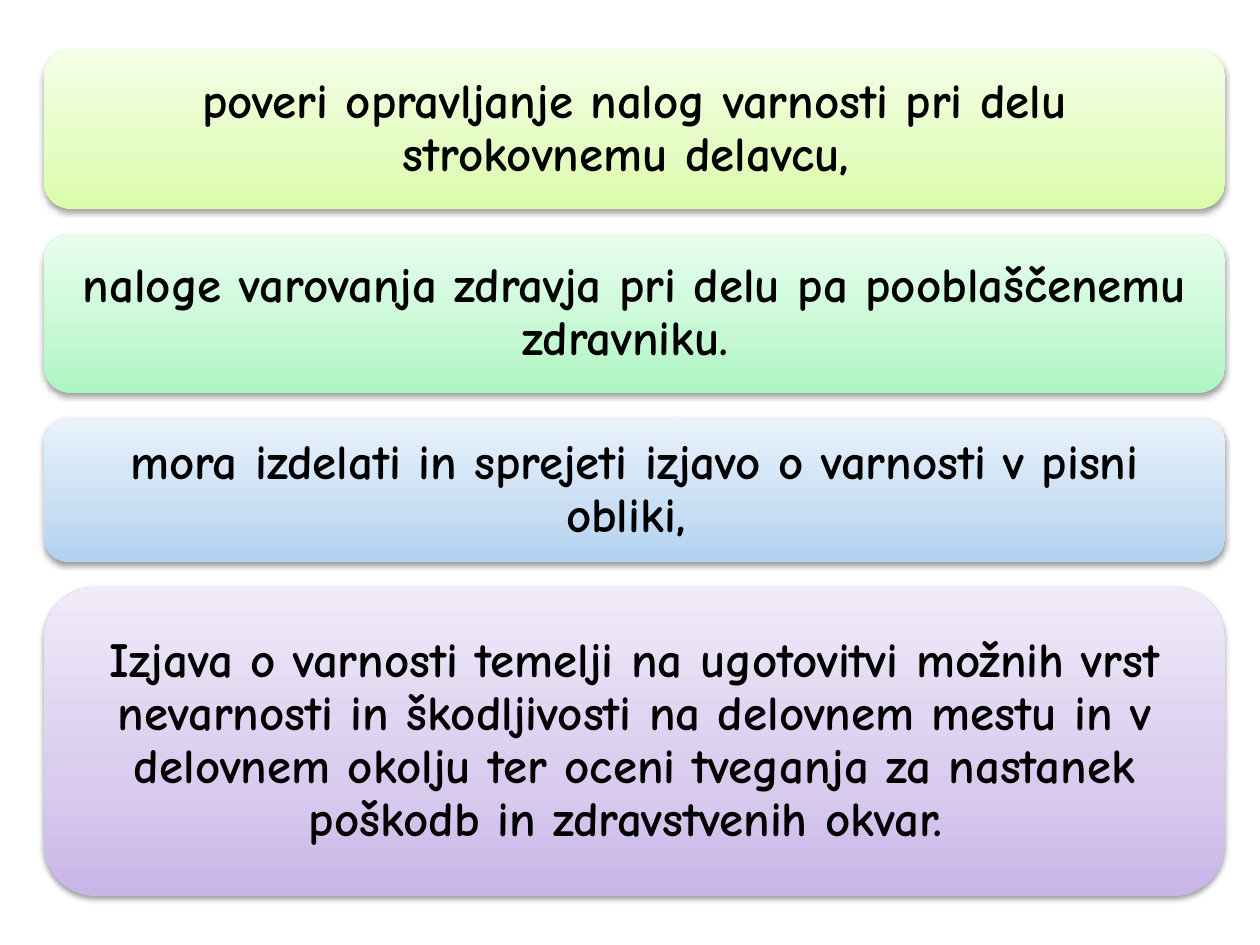
"""Build a slide of four stacked gradient panels about safety at work."""
from copy import deepcopy
from dataclasses import dataclass

from pptx import Presentation
from pptx.dml.color import RGBColor
from pptx.enum.shapes import MSO_SHAPE
from pptx.enum.text import MSO_ANCHOR, PP_ALIGN
from pptx.oxml import parse_xml
from pptx.oxml.ns import nsdecls, qn
from pptx.util import Pt

ROUNDED = MSO_SHAPE.ROUNDED_RECTANGLE
MIDDLE = MSO_ANCHOR.MIDDLE
CENTER = PP_ALIGN.CENTER

EMU_PER_PX = 914400 / 126
LEFT, TOP, WIDTH, GAP = 44, 50, 1181, 25
INSET = 15
STOP_POSITIONS = (0, 0.35, 1)
SHADOW_XML = (
    f'<a:outerShdw {nsdecls("a")} blurRad="40000" dist="20000" dir="5400000" '
    'rotWithShape="0"><a:srgbClr val="000000"><a:alpha val="38000"/>'
    '</a:srgbClr></a:outerShdw>'
)


@dataclass(frozen=True)
class Panel:
    text: str
    height: int
    colors: tuple[str, str, str]


PANELS = (
    Panel("poveri opravljanje nalog varnosti pri delu strokovnemu delavcu, ",
          159, ("DAFDA7", "E4FCC2", "F5FFE7")),
    Panel("naloge varovanja zdravja pri delu pa pooblaščenemu zdravniku. ",
          159, ("ACF6C1", "C5F8D3", "E8FDEE")),
    Panel("mora izdelati in sprejeti izjavo o varnosti v pisni obliki, ",
          144, ("B0D1EF", "C8DEF3", "E9F2FB")),
    Panel("Izjava o varnosti temelji na ugotovitvi možnih vrst nevarnosti in "
          "škodljivosti na delovnem mestu in v delovnem okolju ter oceni "
          "tveganja za nastanek poškodb in zdravstvenih okvar. ",
          309, ("C9B5E8", "D8CBEE", "F0EAF9")),
)


def px(n: int) -> int:
    """Turn pixels into EMU."""
    return round(n * EMU_PER_PX)


def rgb(color: str) -> RGBColor:
    """Turn a hex string into a colour."""
    return RGBColor.from_string(color)


def fill_gradient(sp, colors: tuple[str, str, str]) -> None:
    """Fill a shape with three colours running from bottom to top."""
    sp.fill.gradient()
    sp.fill.gradient_angle = 90
    gs_lst = next(sp._element.spPr.iter(qn("a:gsLst")))
    gs_lst.insert(1, deepcopy(gs_lst[0]))
    for stop, position, color in zip(sp.fill.gradient_stops, STOP_POSITIONS, colors):
        stop.position = position
        stop.color.rgb = rgb(color)


def add_shadow(sp) -> None:
    """Give a shape a soft shadow below it."""
    sp.shadow.inherit = False
    sp._element.spPr.find(qn("a:effectLst")).append(parse_xml(SHADOW_XML))


def write_text(sp, text: str, *, size: int = 28, font: str = "Comic Neue",
               color: str = "000000", bold: bool = True) -> None:
    """Write centred text into a shape."""
    tf = sp.text_frame
    tf.word_wrap = True
    tf.vertical_anchor = MIDDLE
    tf.margin_left = tf.margin_right = tf.margin_top = tf.margin_bottom = px(INSET)
    p = tf.paragraphs[0]
    p.alignment = CENTER
    p.line_spacing = 0.9
    r = p.add_run()
    r.text = text
    r.font.size = Pt(size)
    r.font.name = font
    r.font.bold = bold
    r.font.color.rgb = rgb(color)


def add_panel(slide, panel: Panel, top: int) -> None:
    """Draw one panel with its text."""
    sp = slide.shapes.add_shape(ROUNDED, px(LEFT), px(top), px(WIDTH), px(panel.height))
    fill_gradient(sp, panel.colors)
    sp.line.fill.background()
    add_shadow(sp)
    write_text(sp, panel.text)


def main() -> None:
    """Build and save the slide."""
    prs = Presentation()
    prs.slide_width, prs.slide_height = px(1260), px(945)
    slide = prs.slides.add_slide(prs.slide_layouts[6])
    top = TOP
    for panel in PANELS:
        add_panel(slide, panel, top)
        top += panel.height + GAP
    prs.save("out.pptx")


if __name__ == "__main__":
    main()
